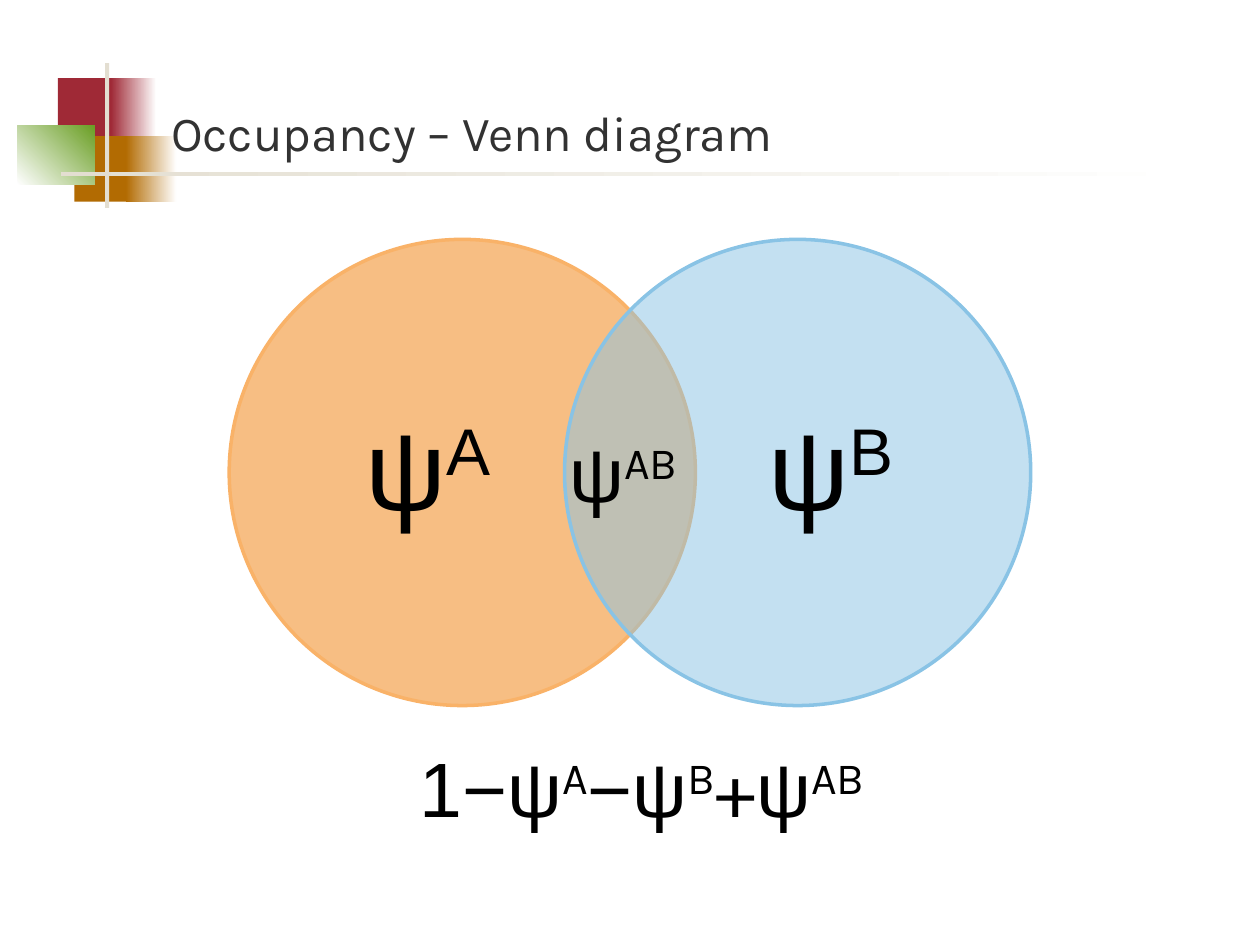
from dataclasses import dataclass

from pptx import Presentation
from pptx.dml.color import RGBColor
from pptx.enum.shapes import MSO_SHAPE as Shape
from pptx.enum.text import MSO_ANCHOR as Anchor, MSO_AUTO_SIZE as AutoSize, PP_ALIGN as Align
from pptx.oxml.xmlchemy import OxmlElement
from pptx.util import Pt


@dataclass(frozen=True)
class Theme:
    red: str = "9F2936"
    brown: str = "B26B02"
    green: str = "6B9F25"
    rule: str = "E3DED1"
    white: str = "FFFFFF"
    title: str = "323232"
    text: str = "000000"
    orange: str = "F07F09"
    orange_edge: str = "F9B268"
    blue: str = "89C3E5"
    heading_font: str = "Karla"
    symbol_font: str = "Arial"
    title_size: int = 28
    set_size: int = 65
    formula_size: int = 44


class SlideBuilder:
    def __init__(self, page, theme):
        self.page = page
        self.theme = theme

    def _shape(self, kind, box):
        shape = self.page.shapes.add_shape(kind, *map(Pt, box))
        shape.shadow.inherit = False
        return shape

    def block(self, box, color, end=None, angle=0):
        """Borderless rectangle, fading to the end colour if there is one."""
        shape = self._shape(Shape.RECTANGLE, box)
        shape.line.fill.background()
        if end is None:
            shape.fill.solid()
            shape.fill.fore_color.rgb = RGBColor.from_string(color)
            return
        shape.fill.gradient()
        shape.fill.gradient_angle = angle
        for stop, value in zip(shape.fill.gradient_stops, (color, end)):
            stop.color.rgb = RGBColor.from_string(value)

    def circle(self, box, color, edge):
        """Half-transparent circle."""
        shape = self._shape(Shape.OVAL, box)
        shape.fill.solid()
        shape.fill.fore_color.rgb = RGBColor.from_string(color)
        alpha = OxmlElement("a:alpha")
        alpha.set("val", "50000")
        shape.fill._xPr.solidFill[0].append(alpha)
        shape.line.color.rgb = RGBColor.from_string(edge)
        shape.line.width = Pt(2)

    def text(self, box, spans, size, color=None, anchor=Anchor.TOP, wrap=True):
        """One paragraph; each span is (words, font, is superscript)."""
        frame = self.page.shapes.add_textbox(*map(Pt, box)).text_frame
        frame.word_wrap = wrap
        frame.vertical_anchor = anchor
        if not wrap:
            frame.auto_size = AutoSize.SHAPE_TO_FIT_TEXT
        para = frame.paragraphs[0]
        para.font.size = Pt(size)
        para.font.color.rgb = RGBColor.from_string(color or self.theme.text)
        fonts = {font for _, font, _ in spans}
        if len(fonts) == 1:
            para.font.name = fonts.pop()
        for words, font, raised in spans:
            span = para.add_run()
            span.text = words
            if para.font.name is None:
                span.font.name = font
            if raised:
                span.font._element.set("baseline", "30000")
        return frame

    def set_label(self, box, spans):
        """Centred label without insets."""
        frame = self.text(box, spans, self.theme.set_size, anchor=Anchor.MIDDLE)
        frame.margin_left = frame.margin_right = 0
        frame.margin_top = frame.margin_bottom = 0
        frame.paragraphs[0].alignment = Align.CENTER
        frame.paragraphs[0].line_spacing = 0.9


def main():
    theme = Theme()
    deck = Presentation()
    deck.slide_width, deck.slide_height = Pt(720), Pt(540)
    page = deck.slides.add_slide(deck.slide_layouts[6])
    builder = SlideBuilder(page, theme)
    heading, symbol = theme.heading_font, theme.symbol_font

    # Corner ornament and title rule
    builder.block((33.1, 44.6, 34.6, 37.4), theme.red)
    builder.block((63.4, 44.6, 25.9, 37.4), theme.red, theme.white)
    builder.block((42.5, 77.8, 33.1, 37.4), theme.brown)
    builder.block((72, 77.8, 28.8, 37.4), theme.brown, theme.white)
    builder.block((10, 72, 44.2, 33.5), theme.white, theme.green, angle=45)
    builder.block((60, 36, 2.4, 82.8), theme.rule)
    builder.block((35, 98.2, 648, 2.2), theme.rule, theme.white)

    # Title
    builder.text((90.7, 16.6, 613.4, 79.2), [("Occupancy – Venn diagram", heading, False)],
                 theme.title_size, theme.title, Anchor.BOTTOM)

    # Venn circles and their labels
    diameter = 266.4
    sets = [
        (131, 167.8, "Α", theme.orange, theme.orange_edge),
        (322.6, 398.2, "Β", theme.blue, theme.blue),
    ]
    for left, label_left, name, color, edge in sets:
        builder.circle((left, 136.8, diameter, diameter), color, edge)
        builder.set_label((label_left, 168.5, 153.4, 203.8),
                          [("ψ", symbol, False), (name, symbol, True)])

    # Overlap label and formula for the area outside both circles
    overlap = [("ψ", symbol, False), ("AB", heading, True)]
    outside = [
        ("1−ψ", symbol, False), ("A", heading, True),
        ("−ψ", symbol, False), ("B", heading, True),
        ("+", heading, False), *overlap,
    ]
    builder.text((318.2, 239.8, 79.9, 60.5), overlap, theme.formula_size, wrap=False)
    builder.text((232.6, 419.8, 279.4, 60.5), outside, theme.formula_size, wrap=False)

    deck.save("out.pptx")


if __name__ == "__main__":
    main()
